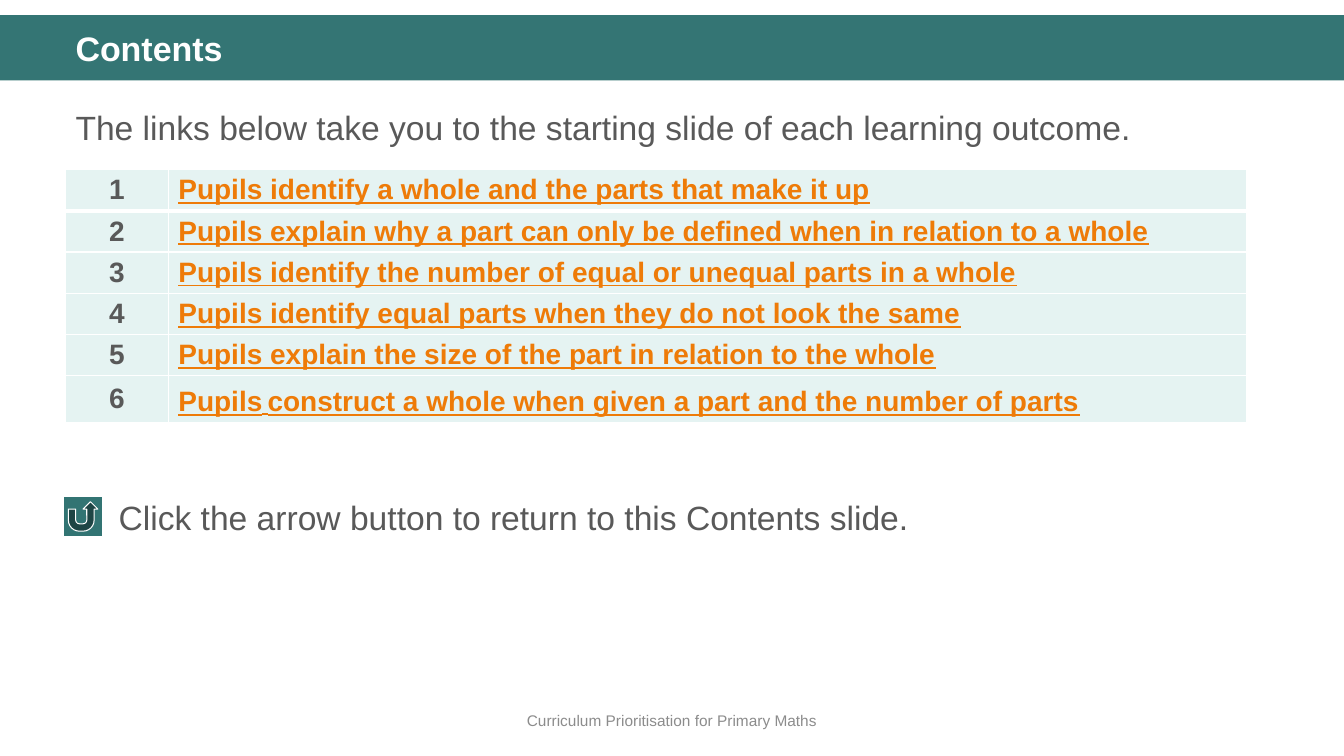
from dataclasses import dataclass

from lxml import etree
from pptx import Presentation
from pptx import util as u
from pptx.dml.color import RGBColor
from pptx.enum import shapes, text
from pptx.oxml import ns


@dataclass(frozen=True)
class Theme:
    font: str = "Arial"
    space_font: str = "Calibri"
    bar: str = "347574"
    button: str = "327473"
    cell: str = "E5F3F2"
    white: str = "FFFFFF"
    body: str = "595959"
    link: str = "EE7B08"
    footer: str = "8C8C8C"
    title_size: float = 24.3
    body_size: float = 24
    table_size: float = 20
    space_size: float = 16
    footer_size: float = 11


theme = Theme()


def add_span(para, words, size, color, bold=False, underline=False, font=theme.font):
    span = para.add_run()
    span.text = words
    span.font.name = font
    span.font.size = u.Pt(size)
    span.font.bold = bold
    span.font.underline = underline
    span.font.color.rgb = RGBColor.from_string(color)


def add_border(cell, side, points):
    line = etree.SubElement(cell._tc.get_or_add_tcPr(), ns.qn(f"a:{side}"), w=str(u.Pt(points)))
    fill = etree.SubElement(line, ns.qn("a:solidFill"))
    etree.SubElement(fill, ns.qn("a:srgbClr"), val=theme.white)


deck = Presentation()
deck.slide_width, deck.slide_height = u.Cm(33.87), u.Cm(19.05)
page = deck.slides.add_slide(deck.slide_layouts[1])

bar = page.shapes.add_shape(shapes.MSO_SHAPE.RECTANGLE, 0, u.Cm(0.38), deck.slide_width, u.Cm(1.65))
bar.shadow.inherit = False
bar.fill.solid()
bar.fill.fore_color.rgb = RGBColor.from_string(theme.bar)
bar.line.fill.background()
bar.element.getparent().insert(2, bar.element)

title = page.shapes.title
title.left, title.top, title.width, title.height = u.Cm(1.65), u.Cm(0.69), u.Cm(30.94), u.Cm(1.19)
title.text_frame.auto_size = text.MSO_AUTO_SIZE.NONE
title.text_frame.vertical_anchor = text.MSO_ANCHOR.TOP
para = title.text_frame.paragraphs[0]
para.alignment = text.PP_ALIGN.LEFT
para.line_spacing = 0.9
add_span(para, "Contents", theme.title_size, theme.white, bold=True)

intro = page.placeholders[1]
intro.left, intro.top, intro.width, intro.height = u.Cm(1.65), u.Cm(2.36), u.Cm(30.94), u.Cm(8.92)
intro.text_frame.auto_size = text.MSO_AUTO_SIZE.NONE
para = intro.text_frame.paragraphs[0]
properties = para._p.get_or_add_pPr()
properties.set("marL", "0")
properties.set("indent", "0")
etree.SubElement(properties, ns.qn("a:buNone"))
para.line_spacing = 1.2
para.space_before = u.Pt(0)
add_span(para, "The links below take you to the starting slide of each learning outcome.",
         theme.body_size, theme.body)

outcomes = [
    ["Pupils identify a whole and the parts that make it up"],
    ["Pupils explain why a part can only be defined when in relation to a whole"],
    ["Pupils identify the number of equal or unequal parts in a whole"],
    ["Pupils identify equal parts when they do not look the same"],
    ["Pupils explain the size of the part in relation to the whole"],
    ["Pupils", " ", "construct a whole when given a part and the number of parts"],
]
table = page.shapes.add_table(len(outcomes), 2, u.Cm(1.65), u.Cm(4.27), u.Cm(29.77), u.Cm(6.36)).table
table.first_row = table.horz_banding = False
table.columns[0].width, table.columns[1].width = u.Cm(2.59), u.Cm(27.18)

for index, pieces in enumerate(outcomes):
    table.rows[index].height = u.Cm(1.04 if len(pieces) == 1 else 1.16)
    number, outcome = table.cell(index, 0), table.cell(index, 1)
    for cell in (number, outcome):
        cell.vertical_anchor = text.MSO_ANCHOR.MIDDLE
        cell.margin_top = cell.margin_bottom = u.Cm(0.11)
        for side in ("lnL", "lnR", "lnT", "lnB"):
            add_border(cell, side, 3 if index == 0 and side == "lnB" else 1)
        cell.fill.solid()
        cell.fill.fore_color.rgb = RGBColor.from_string(theme.cell)
    para = number.text_frame.paragraphs[0]
    para.alignment = text.PP_ALIGN.CENTER
    add_span(para, str(index + 1), theme.table_size, theme.body, bold=True)
    para = outcome.text_frame.paragraphs[0]
    if len(pieces) > 1:
        para.line_spacing = 1.2
    for piece in pieces:
        if piece.strip():
            add_span(para, piece, theme.table_size, theme.link, bold=True, underline=True)
        else:
            add_span(para, piece, theme.space_size, theme.link, underline=True, font=theme.space_font)

button = page.shapes.add_shape(shapes.MSO_SHAPE.ACTION_BUTTON_RETURN,
                               u.Cm(1.6), u.Cm(12.52), u.Cm(0.99), u.Cm(0.99))
button.shadow.inherit = False
button.fill.solid()
button.fill.fore_color.rgb = RGBColor.from_string(theme.button)
button.line.color.rgb = RGBColor.from_string(theme.white)
button.line.width = u.Pt(0.75)

hint = page.shapes.add_textbox(u.Cm(2.74), u.Cm(12.4), u.Cm(28.75), u.Cm(1.27))
hint.text_frame.word_wrap = True
hint.text_frame.auto_size = text.MSO_AUTO_SIZE.SHAPE_TO_FIT_TEXT
add_span(hint.text_frame.paragraphs[0], "Click the arrow button to return to this Contents slide.",
         theme.body_size, theme.body)

footer = page.shapes.add_textbox(0, u.Cm(17.65), deck.slide_width, u.Cm(1.02))
footer.text_frame.word_wrap = True
footer.text_frame.vertical_anchor = text.MSO_ANCHOR.MIDDLE
para = footer.text_frame.paragraphs[0]
para.alignment = text.PP_ALIGN.CENTER
add_span(para, "Curriculum Prioritisation for Primary Maths", theme.footer_size, theme.footer)

deck.save("out.pptx")
